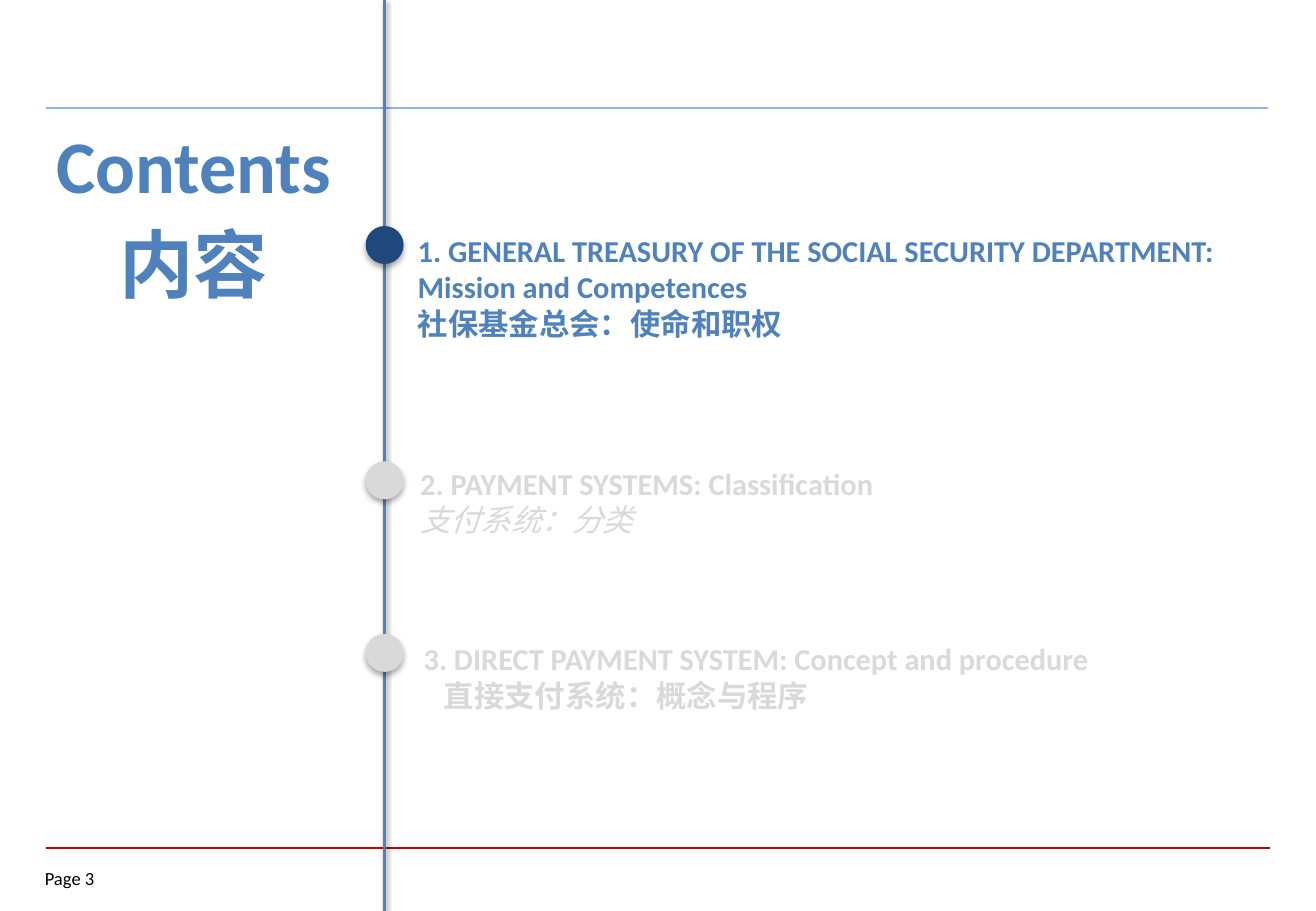
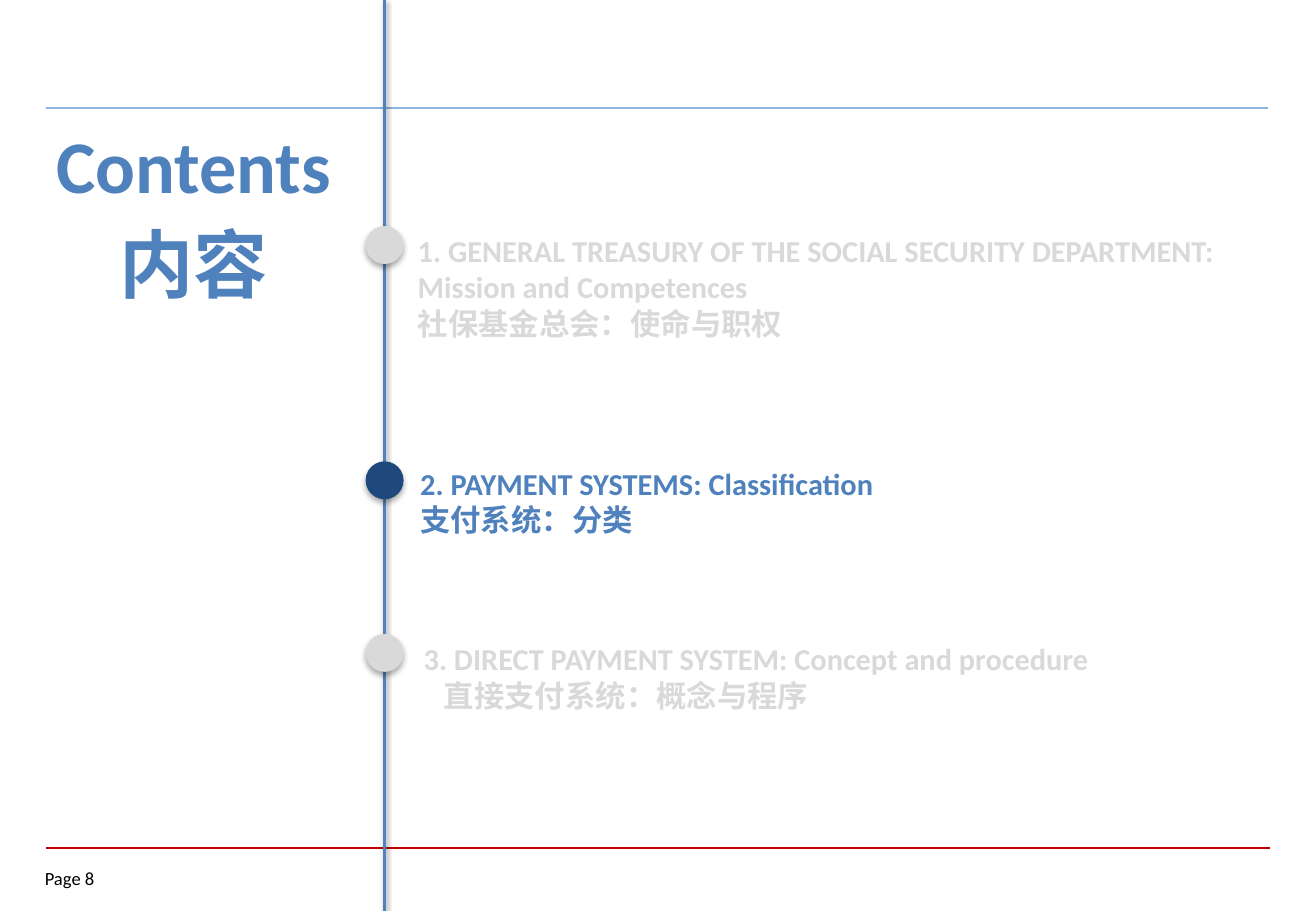
from lxml.etree import SubElement
from pptx import Presentation
from pptx.dml.color import RGBColor
from pptx.enum.shapes import MSO_CONNECTOR, MSO_SHAPE
from pptx.enum.text import MSO_AUTO_SIZE, PP_ALIGN
from pptx.oxml.ns import qn
from pptx.util import Pt

WIDE, HIGH = 780, 540
AXIS, DOT = 228, 22.5
BLUE, NAVY, GREY = "4F81BD", "1F497D", "D9D9D9"
SKY, RED, BLACK = "8EB4E3", "C00000", "000000"

# Shadows: opacity in percent, blur and distance in points
SOFT = (38, 3.1, 1.6)
DEEP = (32, 3.5, 2.2)

# Text formats
TITLE = {"name": "Calibri", "size": Pt(44), "bold": True}
ITEM = {"name": "Calibri", "size": Pt(18), "bold": True}
LIGHT = {**ITEM, "bold": False, "italic": True}
FOOT = {"name": "Calibri", "size": Pt(11)}


def color(code):
    return RGBColor.from_string(code)


class Deck:
    def __init__(self):
        self.file = Presentation()
        self.file.slide_width, self.file.slide_height = Pt(WIDE), Pt(HIGH)
        self.slide = None

    def shade(self, shape, glow=None):
        props = shape._element.spPr
        for old in props.findall(qn("a:effectLst")):
            props.remove(old)
        box = SubElement(props, qn("a:effectLst"))
        if glow:
            alpha, blur, dist = glow
            drop = SubElement(box, qn("a:outerShdw"), blurRad=str(Pt(blur)),
                              dist=str(Pt(dist)), dir="5400000", rotWithShape="0")
            tint = SubElement(drop, qn("a:srgbClr"), val=BLACK)
            SubElement(tint, qn("a:alpha"), val=str(alpha * 1000))

    def line(self, x1, y1, x2, y2, hue, width, glow=None):
        rule = self.slide.shapes.add_connector(
            MSO_CONNECTOR.STRAIGHT, Pt(x1), Pt(y1), Pt(x2), Pt(y2))
        rule.line.color.rgb = color(hue)
        rule.line.width = Pt(width)
        self.shade(rule, glow)

    def dot(self, top, hue):
        disc = self.slide.shapes.add_shape(
            MSO_SHAPE.OVAL, Pt(AXIS - DOT / 2), Pt(top), Pt(DOT), Pt(DOT))
        disc.fill.solid()
        disc.fill.fore_color.rgb = color(hue)
        disc.line.fill.background()
        self.shade(disc, DEEP)

    def text(self, area, rows, hue, align=PP_ALIGN.LEFT, gap=0, indent=0, inset=None):
        """Each row is a pair of wording and format."""
        box = self.slide.shapes.add_textbox(*map(Pt, area))
        frame = box.text_frame
        frame.word_wrap = True
        if inset is None:
            frame.auto_size = MSO_AUTO_SIZE.SHAPE_TO_FIT_TEXT
        else:
            for side in ("left", "top", "right", "bottom"):
                setattr(frame, "margin_" + side, Pt(inset))
        for at, (words, form) in enumerate(rows):
            para = frame.add_paragraph() if at else frame.paragraphs[0]
            para.alignment = align
            if at:
                para.space_before = Pt(gap)
                if indent:
                    para._p.get_or_add_pPr().set("marL", str(Pt(indent)))
            run = para.add_run()
            run.text = words
            for key, value in form.items():
                setattr(run.font, key, value)
            run.font.color.rgb = color(hue)

    def page(self, number):
        self.slide = self.file.slides.add_slide(self.file.slide_layouts[6])
        # Bands and footer
        self.line(27.5, 502.5, 753, 502.5, RED, 1)
        self.line(27.5, 64, 751.5, 64, SKY, 1.5)
        self.text((26.6, 514, 52.5, 16), [(f"Page {number}", FOOT)], BLACK, inset=0)
        # Title and timeline
        self.text((5, 67, 219.6, 120), [("Contents", TITLE), ("内容", TITLE)],
                  BLUE, PP_ALIGN.CENTER, gap=6)
        self.line(AXIS, 0, AXIS, HIGH, BLUE, 2, SOFT)

    def item(self, top, area, rows, live, indent=0):
        self.dot(top, NAVY if live else GREY)
        self.text(area, rows, BLUE if live else GREY, indent=indent)


# Topics: dot top, text area, English wording, indent of the Chinese line
TOPICS = [
    (134, (240.5, 134, 506, 94), "1. GENERAL TREASURY OF THE SOCIAL SECURITY "
     "DEPARTMENT: Mission and Competences", 0),
    (273.5, (242, 272, 471, 73), "2. PAYMENT SYSTEMS: Classification", 0),
    (375.75, (244, 376, 502.5, 51),
     "3. DIRECT PAYMENT SYSTEM: Concept and procedure", 12),
]

# Pages: number, live topic, Chinese lines with their formats
LAST = ("直接支付系统：概念与程序", ITEM)
PAGES = [
    (3, 0, [("社保基金总会：使命和职权", ITEM), ("支付系统：分类", LIGHT), LAST]),
    (8, 1, [("社保基金总会：使命与职权", ITEM), ("支付系统：分类", ITEM), LAST]),
]


def main():
    deck = Deck()
    for number, live, lines in PAGES:
        deck.page(number)
        for at, ((top, area, words, indent), line) in enumerate(zip(TOPICS, lines)):
            deck.item(top, area, [(words, ITEM), line], at == live, indent)
    deck.file.save("out.pptx")


if __name__ == "__main__":
    main()
